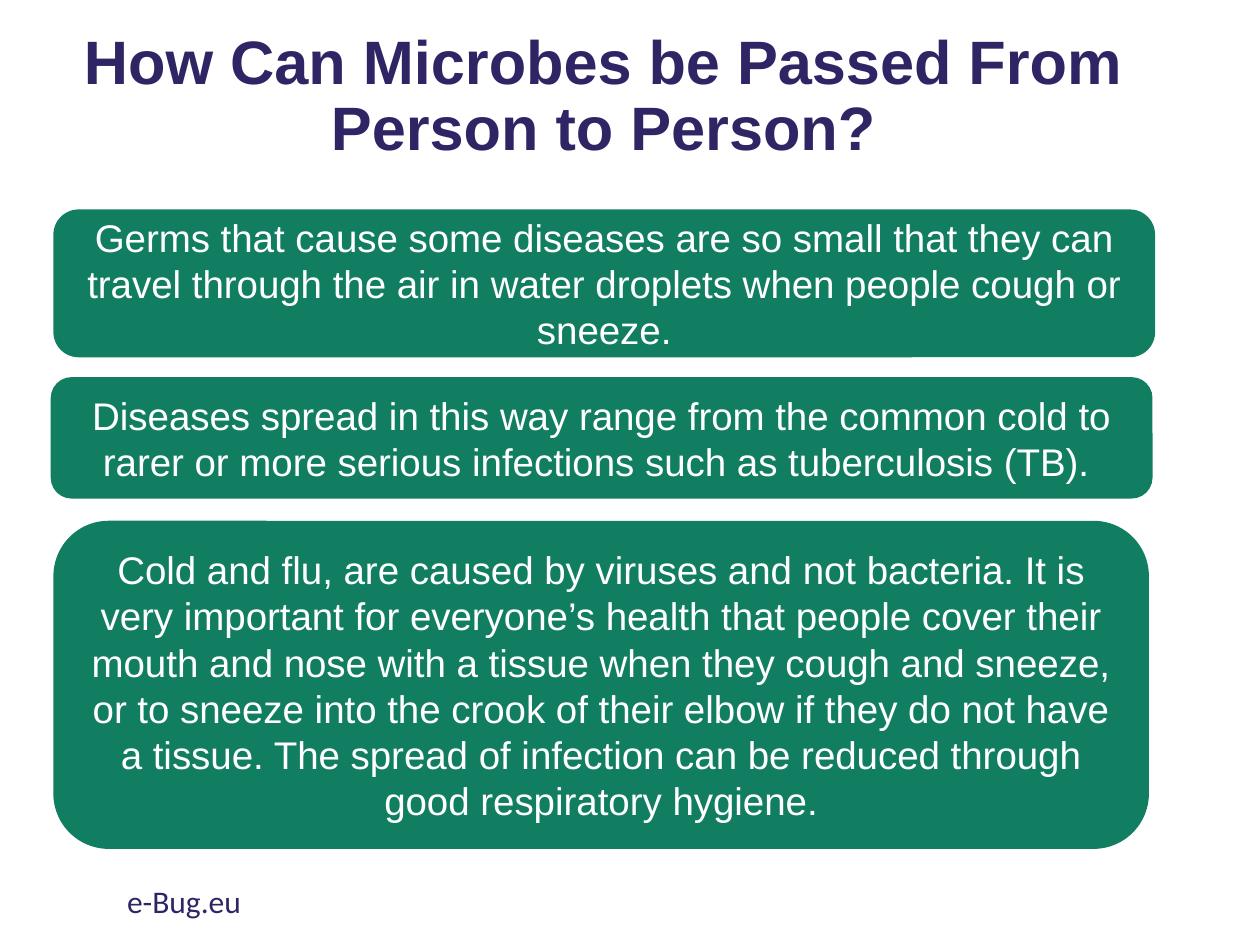
from pptx import Presentation
from pptx.dml.color import RGBColor
from pptx.enum.shapes import MSO_SHAPE
from pptx.enum.text import MSO_ANCHOR, PP_ALIGN
from pptx.util import Pt

NAVY, GREEN, WHITE = "302564", "117E62", "FFFFFF"
TITLE = "How Can Microbes be Passed From Person to Person?"
FOOTER = "e-Bug.eu"
PANELS = [
    ((31, 120.2, 628.6, 83.5),
     "Germs that cause some diseases are so small that they can travel "
     "through the air in water droplets when people cough or sneeze."),
    ((29.5, 216, 628.6, 68.4),
     "Diseases spread in this way range from the common cold to rarer or "
     "more serious infections such as tuberculosis (TB). "),
    ((31, 298.1, 625, 186.5),
     "Cold and flu, are caused by viruses and not bacteria. It is very "
     "important for everyone’s health that people cover their mouth and nose "
     "with a tissue when they cough and sneeze, or to sneeze into the crook of "
     "their elbow if they do not have a tissue. The spread of infection can be "
     "reduced through good respiratory hygiene."),
]


def rgb(value):
    return RGBColor.from_string(value)


def place(sp, box):
    sp.left, sp.top, sp.width, sp.height = map(Pt, box)


def write(sp, text, size, color, font="Arial", bold=False,
          align=PP_ALIGN.CENTER, anchor=MSO_ANCHOR.MIDDLE):
    tf = sp.text_frame
    tf.word_wrap = True
    tf.vertical_anchor = anchor
    p = tf.paragraphs[0]
    p.text = text
    p.alignment = align
    p.font.name, p.font.size, p.font.bold = font, Pt(size), bold
    p.font.color.rgb = rgb(color)
    return p


def add_panel(s, box, text):
    sp = s.shapes.add_shape(MSO_SHAPE.ROUNDED_RECTANGLE, *map(Pt, box))
    sp.shadow.inherit = False
    sp.fill.solid()
    sp.fill.fore_color.rgb = sp.line.color.rgb = rgb(GREEN)
    sp.line.width = Pt(1)
    write(sp, text, 22, WHITE)


def main():
    """Build the slide on how microbes pass between people."""
    prs = Presentation()
    prs.slide_width, prs.slide_height = Pt(720), Pt(540)
    s = prs.slides.add_slide(prs.slide_layouts[5])
    place(s.shapes.title, (34.6, 3.6, 620.6, 104.4))
    write(s.shapes.title, TITLE, 35, NAVY, bold=True).line_spacing = 0.9
    for box, text in PANELS:
        add_panel(s, box, text)
    footer = s.shapes.add_textbox(*map(Pt, (65.5, 500.4, 243.4, 28.8)))
    write(footer, FOOTER, 18, NAVY, font="Calibri",
          align=PP_ALIGN.LEFT, anchor=MSO_ANCHOR.TOP)
    prs.save("out.pptx")


if __name__ == "__main__":
    main()
